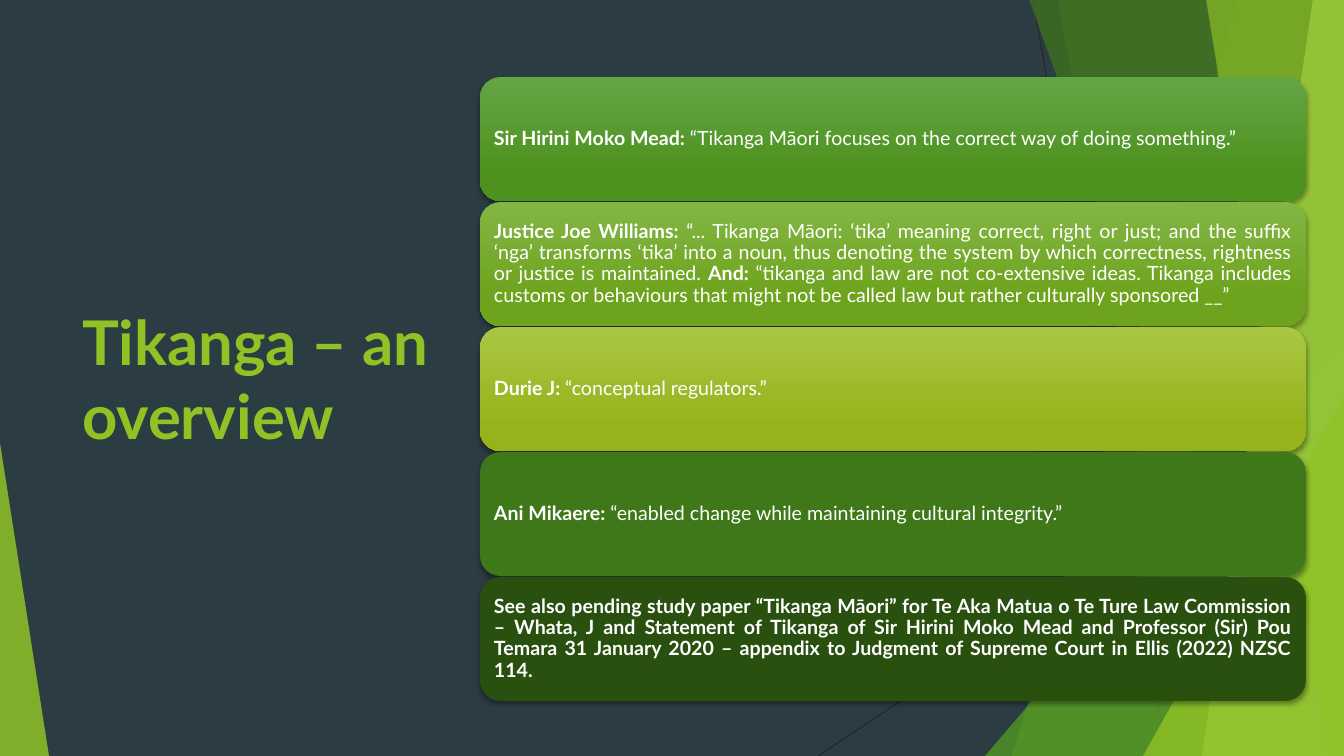
from lxml import etree
from pptx import Presentation
from pptx.dml.color import RGBColor
from pptx.enum.shapes import MSO_CONNECTOR, MSO_SHAPE
from pptx.enum.text import MSO_ANCHOR, MSO_AUTO_SIZE, PP_ALIGN
from pptx.oxml.ns import qn
from pptx.util import Emu, Pt

EMU_PER_PX = 12192000 / 1344
WIDTH, HEIGHT = 1344, 756
FONT = "Lato"
COLORS = {
    "background": "2C3C43", "line": "262626", "lime": "90C226",
    "green": "54A021", "forest": "3F7819", "pale": "C0E474",
    "deep": "2A5010", "white": "FFFFFF", "shadow": "000000",
    "leaf top": "63A545", "leaf": "4D921E",
    "grass top": "82B644", "grass": "6EA31D",
    "olive top": "AAC744", "olive": "97B31C",
}
CARD_LEFT, CARD_TOP, CARD_WIDTH, CARD_HEIGHT, CARD_PITCH = 480, 77, 826, 124, 125
CARDS = [
    (("leaf top", "leaf"), [
        ("Sir Hirini Moko Mead: ", True),
        ("“Tikanga Māori focuses on the correct way of doing something.”", False)]),
    (("grass top", "grass"), [
        ("Justice Joe Williams: ", True),
        ("“... Tikanga Māori: ‘tika’ meaning correct, right or just; and the suffix "
         "‘nga’ transforms ‘tika’ into a noun, thus denoting the system by which "
         "correctness, rightness or justice is maintained. ", False),
        ("And: ", True),
        ("“tikanga and law are not co-extensive ideas. Tikanga includes customs or "
         "behaviours that might not be called law but rather culturally sponsored __”",
         False)]),
    (("olive top", "olive"), [
        ("Durie J: ", True),
        ("“conceptual regulators.”", False)]),
    (("forest",), [
        ("Ani Mikaere: ", True),
        ("“enabled change while maintaining cultural integrity.”", False)]),
    (("deep",), [
        ("See also pending study paper “Tikanga Māori” for Te Aka Matua o Te Ture Law "
         "Commission – Whata, J and Statement of Tikanga of Sir Hirini Moko Mead and "
         "Professor (Sir) Pou Temara 31 January 2020 – appendix to Judgment of Supreme "
         "Court in Ellis (2022) NZSC 114.", True)]),
]


def px(value):
    return Emu(round(value * EMU_PER_PX))


def color(name):
    return RGBColor.from_string(COLORS[name])


def fill_translucent(shape, name, alpha):
    shape.shadow.inherit = False
    shape.line.fill.background()
    shape.fill.solid()
    shape.fill.fore_color.rgb = color(name)
    solid = shape._element.spPr.find(qn("a:solidFill"))
    etree.SubElement(solid[0], qn("a:alpha"), val=str(alpha * 1000))


def add_thin_line(slide, start, end):
    line = slide.shapes.add_connector(
        MSO_CONNECTOR.STRAIGHT, *map(px, start + end))
    line.line.color.rgb = color("line")
    line.line.width = Pt(0.75)
    etree.SubElement(line._element.spPr, qn("a:effectLst"))


def add_facet(slide, top_left, bottom_left, name, alpha):
    builder = slide.shapes.build_freeform(px(top_left), px(-1))
    corners = [(WIDTH, -1), (WIDTH, HEIGHT), (bottom_left, HEIGHT)]
    builder.add_line_segments([(px(x), px(y)) for x, y in corners], close=True)
    fill_translucent(builder.convert_to_shape(), name, alpha)


def add_corner(slide, left, top, width, apex, name, alpha):
    triangle = slide.shapes.add_shape(
        MSO_SHAPE.ISOSCELES_TRIANGLE,
        px(left), px(top), px(width), px(HEIGHT - top))
    triangle.adjustments[0] = apex
    fill_translucent(triangle, name, alpha)


def add_decoration(slide):
    add_thin_line(slide, (1033, 0), (1167, HEIGHT))
    add_thin_line(slide, (WIDTH, 406), (818, HEIGHT))
    add_facet(slide, 1238, 1012, "lime", 30)
    add_facet(slide, 1058, 1192, "lime", 20)
    add_corner(slide, 985, 336, 359, 1, "green", 72)
    add_facet(slide, 1029, 1301, "forest", 70)
    add_facet(slide, 1313, 1202, "pale", 70)
    add_facet(slide, 1206, 1329, "lime", 65)
    add_corner(slide, 1143, 396, 201, 1, "lime", 80)
    add_corner(slide, 0, 443, 49, 0, "lime", 85)


def set_title(slide, text):
    title = slide.shapes.title
    title.left, title.top, title.width, title.height = map(px, (72, 152, 391, 452))
    frame = title.text_frame
    frame.text = text
    frame.word_wrap = True
    frame.auto_size = MSO_AUTO_SIZE.NONE
    frame.vertical_anchor = MSO_ANCHOR.MIDDLE
    paragraph = frame.paragraphs[0]
    paragraph.alignment = PP_ALIGN.LEFT
    set_font(paragraph.font, 44, "lime")
    paragraph.font.bold = True


def set_font(font, size, name):
    font.name = FONT
    font.size = Pt(size)
    font.color.rgb = color(name)


def fill_card(card, names):
    if len(names) == 1:
        card.fill.solid()
        card.fill.fore_color.rgb = color(names[0])
        return
    card.fill.gradient()
    card.fill.gradient_angle = 270
    for stop, name, position in zip(card.fill.gradient_stops, names, (0, 0.78)):
        stop.color.rgb = color(name)
        stop.position = position


def add_shadow(shape):
    shape.shadow.inherit = False
    effects = shape._element.spPr.find(qn("a:effectLst"))
    shadow = etree.SubElement(
        effects, qn("a:outerShdw"), blurRad=str(Pt(3)), dist=str(Pt(2)),
        dir="5400000", algn="ctr", rotWithShape="0")
    tint = etree.SubElement(shadow, qn("a:srgbClr"), val=COLORS["shadow"])
    etree.SubElement(tint, qn("a:alpha"), val="35000")


def add_card(slide, top, fill_names, runs):
    card = slide.shapes.add_shape(
        MSO_SHAPE.ROUNDED_RECTANGLE,
        px(CARD_LEFT), px(top), px(CARD_WIDTH), px(CARD_HEIGHT))
    card.line.fill.background()
    fill_card(card, fill_names)
    add_shadow(card)
    frame = card.text_frame
    frame.word_wrap = True
    frame.vertical_anchor = MSO_ANCHOR.MIDDLE
    frame.margin_left = frame.margin_right = px(8)
    frame.margin_top = frame.margin_bottom = px(8)
    paragraph = frame.paragraphs[0]
    paragraph.alignment = PP_ALIGN.JUSTIFY
    paragraph.line_spacing = 0.9
    set_font(paragraph.font, 14, "white")
    for text, bold in runs:
        run = paragraph.add_run()
        run.text = text
        run.font.bold = bold


def main():
    presentation = Presentation()
    presentation.slide_width = px(WIDTH)
    presentation.slide_height = px(HEIGHT)
    slide = presentation.slides.add_slide(presentation.slide_layouts[5])
    slide.background.fill.solid()
    slide.background.fill.fore_color.rgb = color("background")
    add_decoration(slide)
    set_title(slide, "Tikanga – an overview")
    for index, (fill_names, runs) in enumerate(CARDS):
        add_card(slide, CARD_TOP + index * CARD_PITCH, fill_names, runs)
    presentation.save("out.pptx")


if __name__ == "__main__":
    main()
